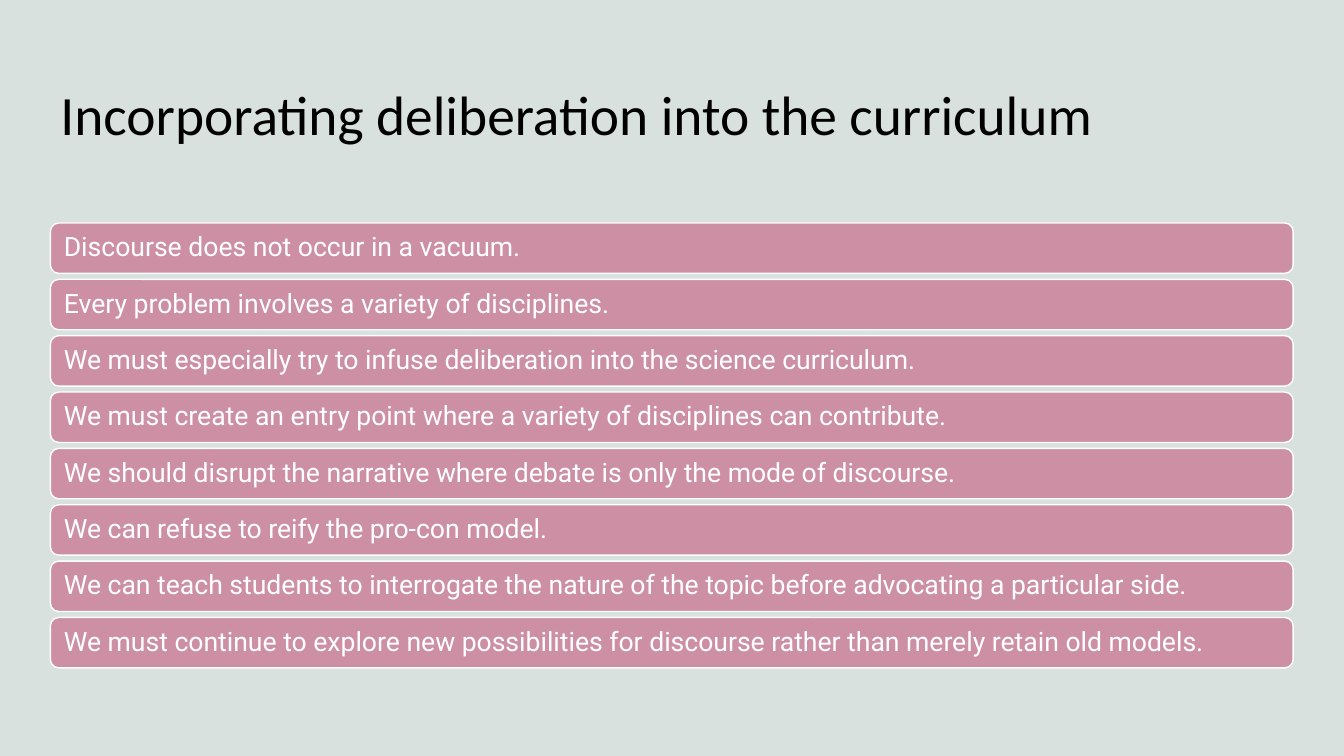
import pptx
import pptx.util
import pptx.dml.color
import pptx.enum.shapes
import pptx.enum.text

Cm = pptx.util.Cm
Pt = pptx.util.Pt
Align = pptx.enum.text.PP_ALIGN
Anchor = pptx.enum.text.MSO_ANCHOR
Fit = pptx.enum.text.MSO_AUTO_SIZE

POINTS = [
    "Discourse does not occur in a vacuum.",
    "Every problem involves a variety of disciplines.",
    "We must especially try to infuse deliberation into the science curriculum.",
    "We must create an entry point where a variety of disciplines can contribute.",
    "We should disrupt the narrative where debate is only the mode of discourse.",
    "We can refuse to reify the pro-con model.",
    "We can teach students to interrogate the nature of the topic before advocating a particular side.",
    "We must continue to explore new possibilities for discourse rather than merely retain old models.",
]


def color(code):
    return pptx.dml.color.RGBColor.from_string(code)


def adjust(item, values):
    for name, value in values.items():
        setattr(item, name, value)


class Deck:
    back, bar_fill, edge = "D8E1DE", "CD8FA3", "FFFFFF"
    head = {"name": "Calibri", "size": Pt(39.6)}
    body = {"name": "Roboto", "size": Pt(19)}
    frame = {"word_wrap": True, "auto_size": Fit.NONE,
             "vertical_anchor": Anchor.MIDDLE}

    def __init__(self, show):
        self.slide = show.slides.add_slide(show.slide_layouts[5])
        fill = self.slide.background.fill
        fill.solid()
        fill.fore_color.rgb = color(self.back)

    def label(self, shape, text, font, ink, lines):
        frame = shape.text_frame
        frame.text = text
        adjust(frame, self.frame)
        para = frame.paragraphs[0]
        adjust(para, {"alignment": Align.LEFT, "line_spacing": lines})
        run = para.runs[0]
        adjust(run.font, font)
        run.font.color.rgb = color(ink)

    def title(self, text, left, top, width, height):
        shape = self.slide.shapes.title
        adjust(shape, {"left": Cm(left), "top": Cm(top),
                       "width": Cm(width), "height": Cm(height)})
        self.label(shape, text, self.head, "000000", 1.0)

    def bar(self, text, left, top, width, height):
        shape = self.slide.shapes.add_shape(
            pptx.enum.shapes.MSO_SHAPE.ROUNDED_RECTANGLE,
            Cm(left), Cm(top), Cm(width), Cm(height))
        shape.shadow.inherit = False
        shape.fill.solid()
        shape.fill.fore_color.rgb = color(self.bar_fill)
        shape.line.color.rgb = color(self.edge)
        shape.line.width = Pt(1)
        self.label(shape, text, self.body, "FFFFFF", 0.9)
        adjust(shape.text_frame, {"margin_left": Cm(0.28), "margin_right": Cm(0.28),
                                  "margin_top": Cm(0.2), "margin_bottom": Cm(0.2)})


def main():
    show = pptx.Presentation()
    adjust(show, {"slide_width": Cm(33.87), "slide_height": Cm(19.05)})
    deck = Deck(show)
    deck.title("Incorporating deliberation into the curriculum",
               1.27, 1.02, 30.28, 3.68)
    for row, text in enumerate(POINTS):
        deck.bar(text, 1.27, 5.62 + row * 1.42, 31.32, 1.27)
    show.save("out.pptx")


if __name__ == "__main__":
    main()
